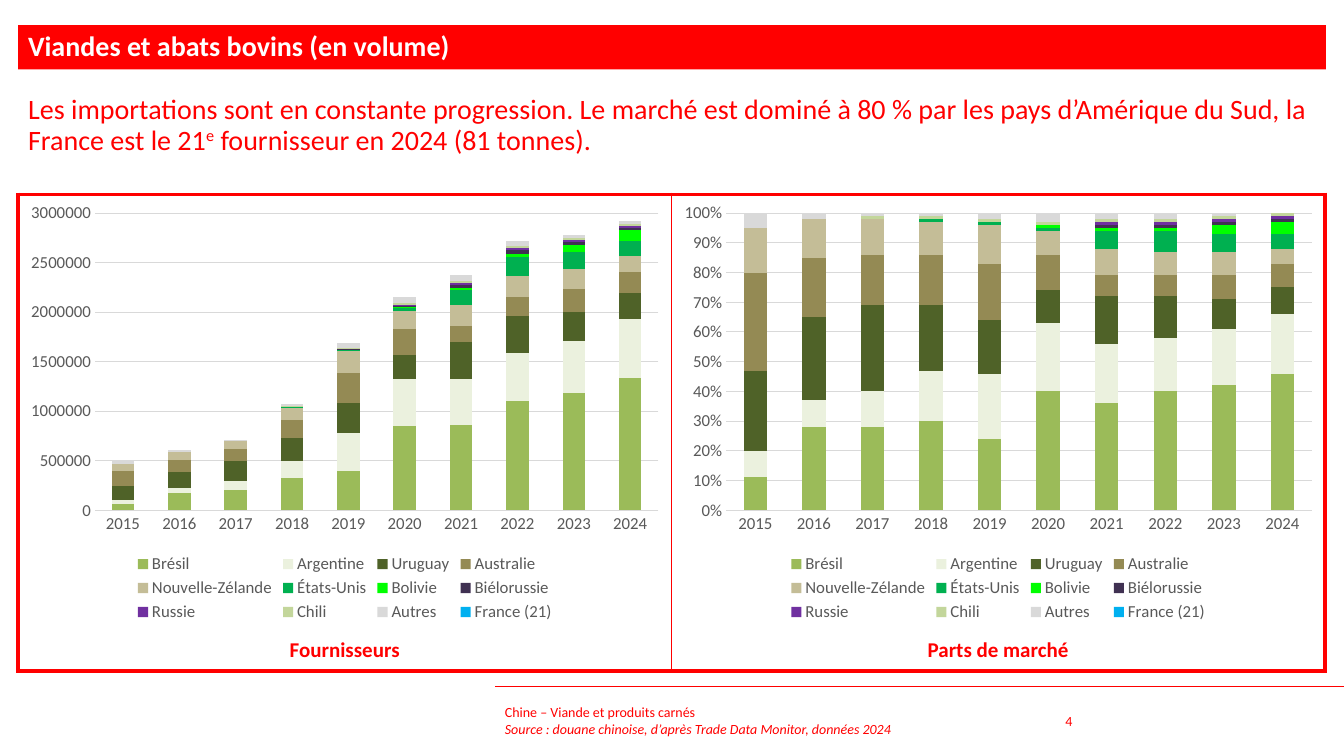
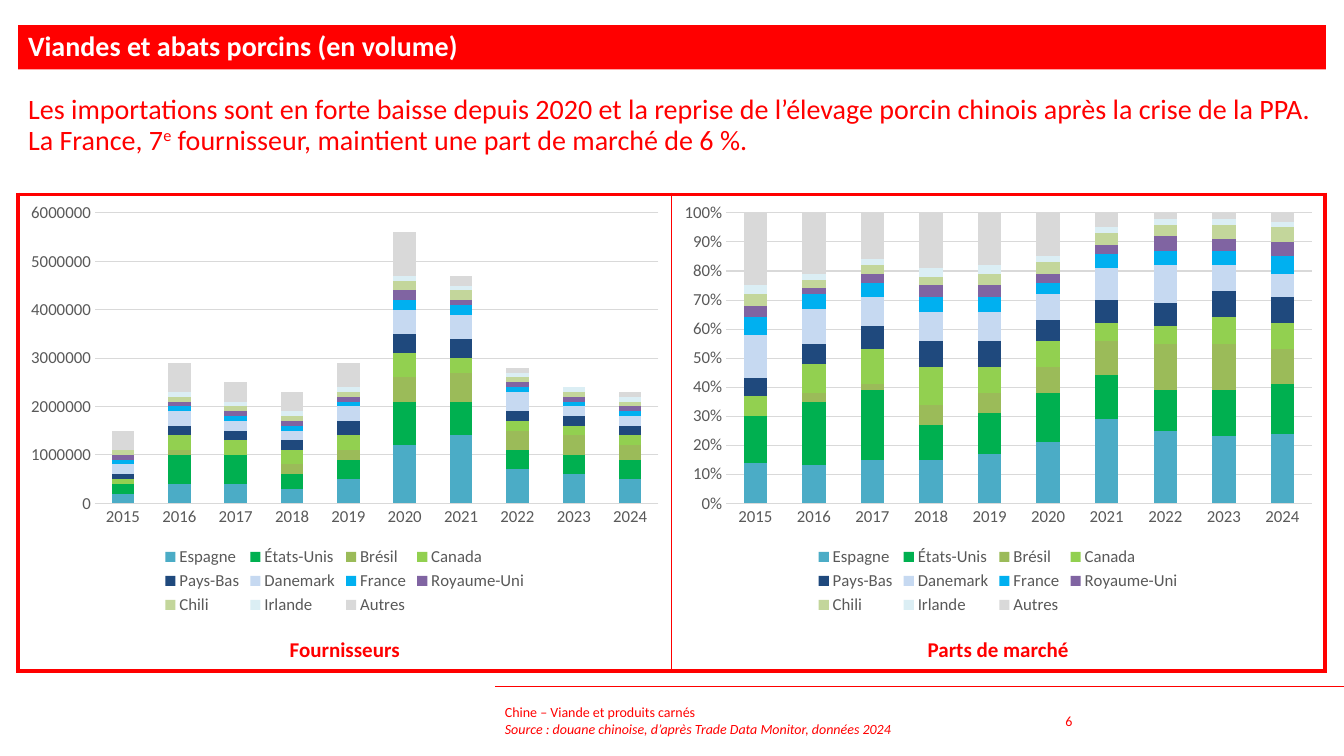
import dataclasses

import lxml.etree
import pptx
import pptx.chart.data
import pptx.dml.color
import pptx.enum.chart
import pptx.enum.shapes
import pptx.enum.text
import pptx.oxml.ns
import pptx.util

RGB = pptx.dml.color.RGBColor
RED = RGB(0xFF, 0x00, 0x00)
WHITE = RGB(0xFF, 0xFF, 0xFF)
AXIS_TEXT = RGB(0x59, 0x59, 0x59)
GRID_GREY = RGB(0xD9, 0xD9, 0xD9)
OLIVE = RGB(0x9B, 0xBB, 0x59)
IVORY = RGB(0xEB, 0xF1, 0xDE)
FOREST = RGB(0x4F, 0x62, 0x28)
KHAKI = RGB(0x94, 0x8A, 0x54)
SAND = RGB(0xC4, 0xBD, 0x97)
GREEN = RGB(0x00, 0xB0, 0x50)
NEON = RGB(0x00, 0xFF, 0x00)
PLUM = RGB(0x40, 0x31, 0x52)
PURPLE = RGB(0x70, 0x30, 0xA0)
SAGE = RGB(0xC3, 0xD6, 0x9B)
SKY = RGB(0x00, 0xB0, 0xF0)
TEAL = RGB(0x4B, 0xAC, 0xC6)
LIME = RGB(0x92, 0xD0, 0x50)
NAVY = RGB(0x1F, 0x49, 0x7D)
PALE_BLUE = RGB(0xC6, 0xD9, 0xF1)
MAUVE = RGB(0x80, 0x64, 0xA2)
ICE = RGB(0xDB, 0xEE, 0xF4)

FONT = "Calibri"
TITLE_FORMAT = {"size": pptx.util.Pt(20), "bold": True}
LEAD_FORMAT = {"size": pptx.util.Pt(20)}
CAPTION_FORMAT = {"size": pptx.util.Pt(15), "bold": True}
FOOTER_FORMAT = {"size": pptx.util.Pt(10)}
SOURCE_FORMAT = {"size": pptx.util.Pt(10), "italic": True}
CHART_FORMAT = {"size": pptx.util.Pt(12)}

TOP = pptx.enum.text.MSO_ANCHOR.TOP
MIDDLE = pptx.enum.text.MSO_ANCHOR.MIDDLE
LEFT = pptx.enum.text.PP_ALIGN.LEFT
CENTER = pptx.enum.text.PP_ALIGN.CENTER

YEARS = [str(year) for year in range(2015, 2025)]
CAPTIONS = ("Fournisseurs", "Parts de marché")
FOOTER = "Chine – Viande et produits carnés"
SOURCE = "Source : douane chinoise, d’après Trade Data Monitor, données 2024"

BEEF = [
    ("Brésil", OLIVE, [6, 17, 20, 32, 40, 85, 86, 110, 118, 134], [11, 28, 28, 30, 24, 40, 36, 40, 42, 46]),
    ("Argentine", IVORY, [4, 5, 9, 18, 38, 48, 47, 49, 53, 59], [9, 9, 12, 17, 22, 23, 20, 18, 19, 20]),
    ("Uruguay", FOREST, [14, 17, 21, 23, 30, 24, 37, 37, 29, 26], [27, 28, 29, 22, 18, 11, 16, 14, 10, 9]),
    ("Australie", KHAKI, [16, 12, 12, 18, 31, 26, 16, 19, 23, 22], [33, 20, 17, 17, 19, 12, 7, 7, 8, 8]),
    ("Nouvelle-Zélande", SAND, [7, 8, 8, 12, 22, 18, 21, 22, 21, 16], [15, 13, 12, 11, 13, 8, 9, 8, 8, 5]),
    ("États-Unis", GREEN, [0, 0, 0, 1, 1, 3, 15, 19, 17, 15], [0, 0, 0, 1, 1, 1, 6, 7, 6, 5]),
    ("Bolivie", NEON, [0, 0, 0, 0, 0, 1, 2, 3, 7, 11], [0, 0, 0, 0, 0, 1, 1, 1, 3, 4]),
    ("Biélorussie", PLUM, [0, 0, 0, 0, 1, 1, 3, 4, 3, 2], [0, 0, 0, 0, 0, 0, 1, 1, 1, 1]),
    ("Russie", PURPLE, [0, 0, 0, 0, 0, 1, 2, 2, 2, 2], [0, 0, 0, 0, 0, 0, 1, 1, 1, 1]),
    ("Chili", SAGE, [0, 0, 0, 1, 1, 2, 2, 2, 2, 2], [0, 0, 1, 1, 1, 1, 1, 1, 1, 1]),
    ("Autres", GRID_GREY, [3, 2, 1, 2, 5, 6, 7, 5, 3, 3], [5, 3, 2, 2, 3, 3, 3, 2, 1, 1]),
    ("France (21)", SKY, [0] * 10, [0] * 10),
]
PORK = [
    ("Espagne", TEAL, [2, 4, 4, 3, 5, 12, 14, 7, 6, 5], [14, 13, 15, 15, 17, 21, 29, 25, 23, 24]),
    ("États-Unis", GREEN, [2, 6, 6, 3, 4, 9, 7, 4, 4, 4], [16, 22, 24, 12, 14, 17, 15, 14, 16, 17]),
    ("Brésil", OLIVE, [0, 1, 0, 2, 2, 5, 6, 4, 4, 3], [0, 3, 2, 7, 7, 9, 12, 16, 16, 12]),
    ("Canada", LIME, [1, 3, 3, 3, 3, 5, 3, 2, 2, 2], [7, 10, 12, 13, 9, 9, 6, 6, 9, 9]),
    ("Pays-Bas", NAVY, [1, 2, 2, 2, 3, 4, 4, 2, 2, 2], [6, 7, 8, 9, 9, 7, 8, 8, 9, 9]),
    ("Danemark", PALE_BLUE, [2, 3, 2, 2, 3, 5, 5, 4, 2, 2], [15, 12, 10, 10, 10, 9, 11, 13, 9, 8]),
    ("France", SKY, [1, 1, 1, 1, 1, 2, 2, 1, 1, 1], [6, 5, 5, 5, 5, 4, 5, 5, 5, 6]),
    ("Royaume-Uni", MAUVE, [1, 1, 1, 1, 1, 2, 1, 1, 1, 1], [4, 2, 3, 4, 4, 3, 3, 5, 4, 5]),
    ("Chili", SAGE, [1, 1, 1, 1, 1, 2, 2, 1, 1, 1], [4, 3, 3, 3, 4, 4, 4, 4, 5, 5]),
    ("Irlande", ICE, [0, 1, 1, 1, 1, 1, 1, 1, 1, 1], [3, 2, 2, 3, 3, 2, 2, 2, 2, 2]),
    ("Autres", GRID_GREY, [4, 6, 4, 4, 5, 9, 2, 1, 0, 1], [26, 22, 18, 19, 18, 16, 5, 3, 2, 3]),
]


@dataclasses.dataclass
class Box:
    """Area of a slide."""

    left: int
    top: int
    width: int
    height: int

    def share(self, left, top, width, height):
        """Return the area covering the given percentages of this one."""
        return Box(
            int(self.left + self.width * left / 100),
            int(self.top + self.height * top / 100),
            int(self.width * width / 100),
            int(self.height * height / 100),
        )

    @property
    def frame(self):
        """Return the four lengths that python-pptx expects."""
        return self.left, self.top, self.width, self.height


@dataclasses.dataclass
class Market:
    """Content of one market slide."""

    title: str
    lead: tuple
    number: str
    suppliers: list
    unit: int
    peak: int
    step: int
    chart_height: float


MARKETS = [
    Market(
        "Viandes et abats bovins (en volume)",
        ("Les importations sont en constante progression. Le marché est dominé à 80 % par les pays "
         "d’Amérique du Sud, la France est le 21", "e", " fournisseur en 2024 (81 tonnes)."),
        "4", BEEF, 10000, 3000000, 500000, 90.5,
    ),
    Market(
        "Viandes et abats porcins (en volume)",
        ("Les importations sont en forte baisse depuis 2020 et la reprise de l’élevage porcin chinois "
         "après la crise de la PPA. La France, 7", "e", " fournisseur, maintient une part de marché de 6 %."),
        "6", PORK, 100000, 6000000, 1000000, 89,
    ),
]


def style_font(font, formats, color):
    """Apply the shared typeface, a colour and format values to a font."""
    font.name = FONT
    font.color.rgb = color
    for attribute, value in formats.items():
        setattr(font, attribute, value)


def add_run(paragraph, text, formats, color=RED):
    """Append a formatted run to a paragraph."""
    run = paragraph.add_run()
    run.text = text
    style_font(run.font, formats, color)
    return run


def add_text(slide, box, lines, anchor=TOP, align=LEFT):
    """Place a text box with one paragraph per (text, formats) line."""
    frame = slide.shapes.add_textbox(*box.frame).text_frame
    frame.word_wrap = True
    frame.vertical_anchor = anchor
    for index, (text, formats) in enumerate(lines):
        paragraph = frame.add_paragraph() if index else frame.paragraphs[0]
        paragraph.alignment = align
        add_run(paragraph, text, formats)


def add_title_band(slide, box, title):
    """Draw the red band with its title."""
    band = slide.shapes.add_shape(pptx.enum.shapes.MSO_SHAPE.RECTANGLE, *box.frame)
    band.shadow.inherit = False
    band.fill.solid()
    band.fill.fore_color.rgb = RED
    band.line.fill.background()
    band.text_frame.word_wrap = True
    band.text_frame.vertical_anchor = MIDDLE
    paragraph = band.text_frame.paragraphs[0]
    paragraph.alignment = LEFT
    paragraph.line_spacing = 0.9
    add_run(paragraph, title, TITLE_FORMAT, WHITE)


def add_lead(slide, box, lead):
    """Write the key message with its ordinal mark raised."""
    frame = slide.shapes.add_textbox(*box.frame).text_frame
    frame.word_wrap = True
    paragraph = frame.paragraphs[0]
    paragraph.line_spacing = 0.9
    before, ordinal, after = lead
    add_run(paragraph, before, LEAD_FORMAT)
    raised = add_run(paragraph, ordinal, LEAD_FORMAT)
    raised._r.get_or_add_rPr().set("baseline", "30000")
    add_run(paragraph, after, LEAD_FORMAT)


def set_borders(cell, widths):
    """Draw red cell borders from a dict of side and width in points."""
    qn = pptx.oxml.ns.qn
    properties = cell._tc.get_or_add_tcPr()
    for side, width in widths.items():
        border = lxml.etree.SubElement(properties, qn("a:ln" + side), w=str(pptx.util.Pt(width)))
        fill = lxml.etree.SubElement(border, qn("a:solidFill"))
        lxml.etree.SubElement(fill, qn("a:srgbClr"), val=str(RED))


def add_panel_frame(slide, box):
    """Draw the two-cell table that frames the charts."""
    table = slide.shapes.add_table(1, 2, *box.frame).table
    table.first_row = False
    table.horz_banding = False
    outer, inner = 3, 1
    for column, (left, right) in enumerate([(outer, inner), (inner, outer)]):
        cell = table.cell(0, column)
        set_borders(cell, {"L": left, "R": right, "T": outer, "B": outer})
        cell.fill.background()


def add_stacked_chart(slide, box, series, peak, step, number_format):
    """Place a stacked column chart of (name, colour, values) series by year."""
    data = pptx.chart.data.CategoryChartData(number_format=number_format)
    data.categories = YEARS
    for name, _, values in series:
        data.add_series(name, values)
    kind = pptx.enum.chart.XL_CHART_TYPE.COLUMN_STACKED
    chart = slide.shapes.add_chart(kind, *box.frame, data).chart
    chart.has_title = False
    style_font(chart.font, CHART_FORMAT, AXIS_TEXT)
    chart.has_legend = True
    chart.legend.position = pptx.enum.chart.XL_LEGEND_POSITION.BOTTOM
    chart.legend.include_in_layout = False
    style_font(chart.legend.font, CHART_FORMAT, AXIS_TEXT)

    plot = chart.plots[0]
    for attribute, value in {"gap_width": 150, "overlap": 100, "vary_by_categories": False}.items():
        setattr(plot, attribute, value)
    for bars, (_, color, _) in zip(plot.series, series):
        bars.format.fill.solid()
        bars.format.fill.fore_color.rgb = color

    amounts = chart.value_axis
    scale = {"minimum_scale": 0, "maximum_scale": peak, "major_unit": step, "has_major_gridlines": True}
    for attribute, value in scale.items():
        setattr(amounts, attribute, value)
    amounts.tick_labels.number_format = number_format
    amounts.tick_labels.number_format_is_linked = False
    amounts.format.line.fill.background()
    for axis in (chart.category_axis, amounts):
        axis.major_tick_mark = pptx.enum.chart.XL_TICK_MARK.NONE
        style_font(axis.tick_labels.font, CHART_FORMAT, AXIS_TEXT)
    for line in (chart.category_axis.format.line, amounts.major_gridlines.format.line):
        line.color.rgb = GRID_GREY
        line.width = pptx.util.Pt(0.75)


def add_chart_panel(slide, box, market):
    """Fill the framed panel with volumes on the left and shares on the right."""
    add_panel_frame(slide, box)
    volumes = [(name, color, [v * market.unit for v in tonnes]) for name, color, tonnes, _ in market.suppliers]
    shares = [(name, color, [v / 100 for v in percents]) for name, color, _, percents in market.suppliers]
    charts = [(volumes, market.peak, market.step, "General"), (shares, 1, 0.1, "0%")]
    for column, (caption, chart) in enumerate(zip(CAPTIONS, charts)):
        half = box.share(50 * column, 0, 50, 100)
        add_text(slide, half.share(0, 91.75, 100, 7.4), [(caption, CAPTION_FORMAT)], align=CENTER)
        add_stacked_chart(slide, half.share(0, 0, 100, market.chart_height), *chart)


def add_footer(slide, box, number):
    """Draw the footer rule, the source and the page number."""
    right = box.left + box.width
    straight = pptx.enum.shapes.MSO_CONNECTOR.STRAIGHT
    rule = slide.shapes.add_connector(straight, right, box.top, box.left, box.top)
    rule.line.color.rgb = RED
    rule.line.width = pptx.util.Pt(0.5)
    lxml.etree.SubElement(rule._element.spPr, pptx.oxml.ns.qn("a:effectLst"))
    add_text(slide, box.share(0, 20, 64.5, 58), [(FOOTER, FOOTER_FORMAT), (SOURCE, SOURCE_FORMAT)], MIDDLE)
    add_text(slide, box.share(66, 20, 11.76, 58), [(number, FOOTER_FORMAT)], MIDDLE)


def build_market_slide(deck, market):
    """Add one market slide."""
    slide = deck.slides.add_slide(deck.slide_layouts[6])
    page = Box(0, 0, deck.slide_width, deck.slide_height)
    add_footer(slide, page.share(36.83, 90.8, 63.17, 9.2), market.number)
    add_title_band(slide, page.share(1.35, 3.33, 97.3, 5.87), market.title)
    add_lead(slide, page.share(1.35, 12, 97.22, 10.8), market.lead)
    add_chart_panel(slide, page.share(1.35, 25.73, 97.22, 63.07), market)


def main():
    """Build and save the deck."""
    deck = pptx.Presentation()
    deck.slide_width = pptx.util.Inches(13.33)
    deck.slide_height = pptx.util.Inches(7.5)
    for market in MARKETS:
        build_market_slide(deck, market)
    deck.save("out.pptx")


if __name__ == "__main__":
    main()
